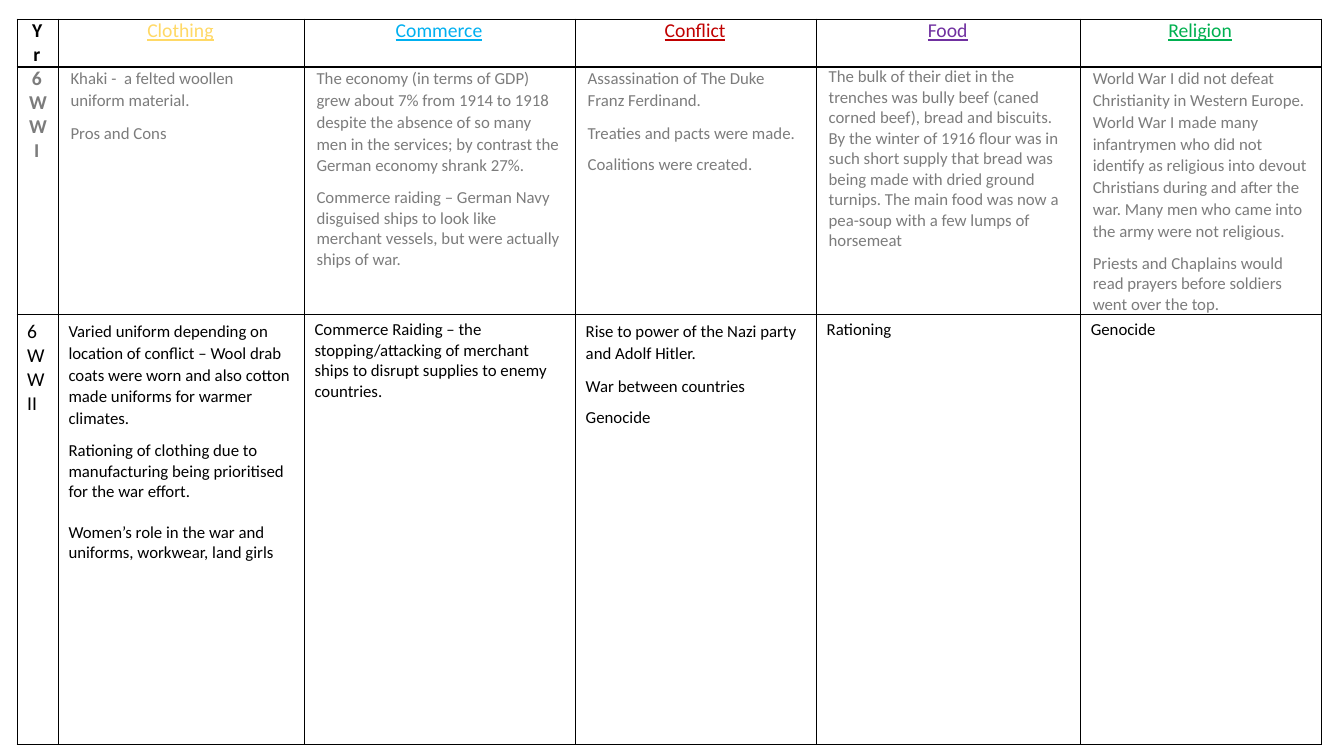
from dataclasses import dataclass

from lxml.etree import SubElement
from pptx import Presentation
from pptx.dml.color import RGBColor
from pptx.enum.text import PP_ALIGN
from pptx.oxml.ns import qn
from pptx.table import _Cell
from pptx.util import Inches, Pt

FONT = "Calibri"
BLACK = "000000"
GREY = "7C7C7C"
COLUMN_WIDTHS = [0.41, 2.44, 2.69, 2.39, 2.62, 2.39]
ROW_HEIGHTS = [0.31, 2.29, 4.26]


@dataclass
class Line:
    text: str
    loose: bool = False
    before: float = 0


@dataclass
class Style:
    size: int = 12
    color: str = BLACK
    bold: bool = False
    underline: bool = False
    centred: bool = False


@dataclass
class Entry:
    lines: list[Line]
    style: Style


@dataclass
class Margins:
    left: float
    right: float
    top: float


def rgb(color: str) -> RGBColor:
    return RGBColor.from_string(color)


def add_borders(cell: _Cell) -> None:
    properties = cell._tc.get_or_add_tcPr()
    for edge in ("a:lnL", "a:lnR", "a:lnT", "a:lnB"):
        border = SubElement(properties, qn(edge), w=str(Pt(1)))
        fill = SubElement(border, qn("a:solidFill"))
        SubElement(fill, qn("a:srgbClr"), val=BLACK)


def fill_cell(cell: _Cell, entry: Entry, margins: Margins) -> None:
    add_borders(cell)
    cell.fill.background()
    cell.margin_left = Inches(margins.left)
    cell.margin_right = Inches(margins.right)
    cell.margin_top = cell.margin_bottom = Inches(margins.top)
    style = entry.style
    for index, line in enumerate(entry.lines):
        frame = cell.text_frame
        paragraph = frame.add_paragraph() if index else frame.paragraphs[0]
        if style.centred:
            paragraph.alignment = PP_ALIGN.CENTER
        if line.loose:
            paragraph.line_spacing = 1.07
            paragraph.space_after = Pt(8)
        if line.before:
            paragraph.space_before = Pt(line.before)
        run = paragraph.add_run()
        run.text = line.text
        run.font.name = FONT
        run.font.size = Pt(style.size)
        run.font.bold = style.bold
        run.font.underline = style.underline
        run.font.color.rgb = rgb(style.color)


# Header row: one colour per theme
THEMES = {
    "Clothing": "FFD966",
    "Commerce": "00B0F0",
    "Conflict": "C00000",
    "Food": "7030A0",
    "Religion": "00B050",
}
header = [Entry([Line("Yr")], Style(14, bold=True, centred=True))] + [
    Entry([Line(theme)], Style(14, color, underline=True, centred=True))
    for theme, color in THEMES.items()
]

# First World War row
first_war_texts = [
    [Line("Khaki -  a felted woollen uniform material.", loose=True),
     Line("Pros and Cons", loose=True)],
    [Line("The economy (in terms of GDP) grew about 7% from 1914 to 1918 "
          "despite the absence of so many men in the services; by contrast "
          "the German economy shrank 27%.", loose=True),
     Line("Commerce raiding – German Navy disguised ships to look like "
          "merchant vessels, but were actually ships of war.")],
    [Line("Assassination of The Duke Franz Ferdinand.", loose=True),
     Line("Treaties and pacts were made.", loose=True),
     Line("Coalitions were created.")],
    [Line("The bulk of their diet in the trenches was bully beef (caned "
          "corned beef), bread and biscuits. By the winter of 1916 flour was "
          "in such short supply that bread was being made with dried ground "
          "turnips. The main food was now a pea-soup with a few lumps of "
          "horsemeat")],
    [Line("World War I did not defeat Christianity in Western Europe. World "
          "War I made many infantrymen who did not identify as religious "
          "into devout Christians during and after the war. Many men who "
          "came into the army were not religious.", loose=True),
     Line("Priests and Chaplains would read prayers before soldiers went "
          "over the top.")],
]
first_war = [
    Entry([Line("6"), Line("WWI")], Style(14, GREY, bold=True, centred=True))
] + [Entry(lines, Style(color=GREY)) for lines in first_war_texts]

# Second World War row
second_war_texts = [
    [Line("Varied uniform depending on location of conflict – Wool drab "
          "coats were worn and also cotton made uniforms for warmer "
          "climates.", loose=True),
     Line("Rationing of clothing due to manufacturing being prioritised for "
          "the war effort."),
     Line("Women’s role in the war and uniforms, workwear, land girls",
          before=14.65)],
    [Line("Commerce Raiding – the stopping/attacking of merchant ships to "
          "disrupt supplies to enemy countries.")],
    [Line("Rise to power of the Nazi party and Adolf Hitler.", loose=True),
     Line("War between countries", loose=True),
     Line("Genocide")],
    [Line("Rationing")],
    [Line("Genocide")],
]
second_war = [Entry([Line("6"), Line("WWII")], Style(14))] + [
    Entry(lines, Style()) for lines in second_war_texts
]


def main() -> None:
    presentation = Presentation()
    presentation.slide_width = Inches(13.33)
    presentation.slide_height = Inches(7.5)
    slide = presentation.slides.add_slide(presentation.slide_layouts[6])

    # Table grid
    table = slide.shapes.add_table(
        len(ROW_HEIGHTS), len(COLUMN_WIDTHS), Inches(0.17), Inches(0.19),
        Inches(sum(COLUMN_WIDTHS)), Inches(sum(ROW_HEIGHTS)),
    ).table
    table.first_row = False
    table.horz_banding = False
    for column, width in zip(table.columns, COLUMN_WIDTHS):
        column.width = Inches(width)
    for row, height in zip(table.rows, ROW_HEIGHTS):
        row.height = Inches(height)

    # Cell contents
    flush, roomy = Margins(0.12, 0.14, 0), Margins(0.1, 0.1, 0.05)
    contents = [(header, flush), (first_war, flush), (second_war, roomy)]
    for row, (entries, margins) in zip(table.rows, contents):
        for cell, entry in zip(row.cells, entries):
            fill_cell(cell, entry, margins)

    presentation.save("out.pptx")


if __name__ == "__main__":
    main()
